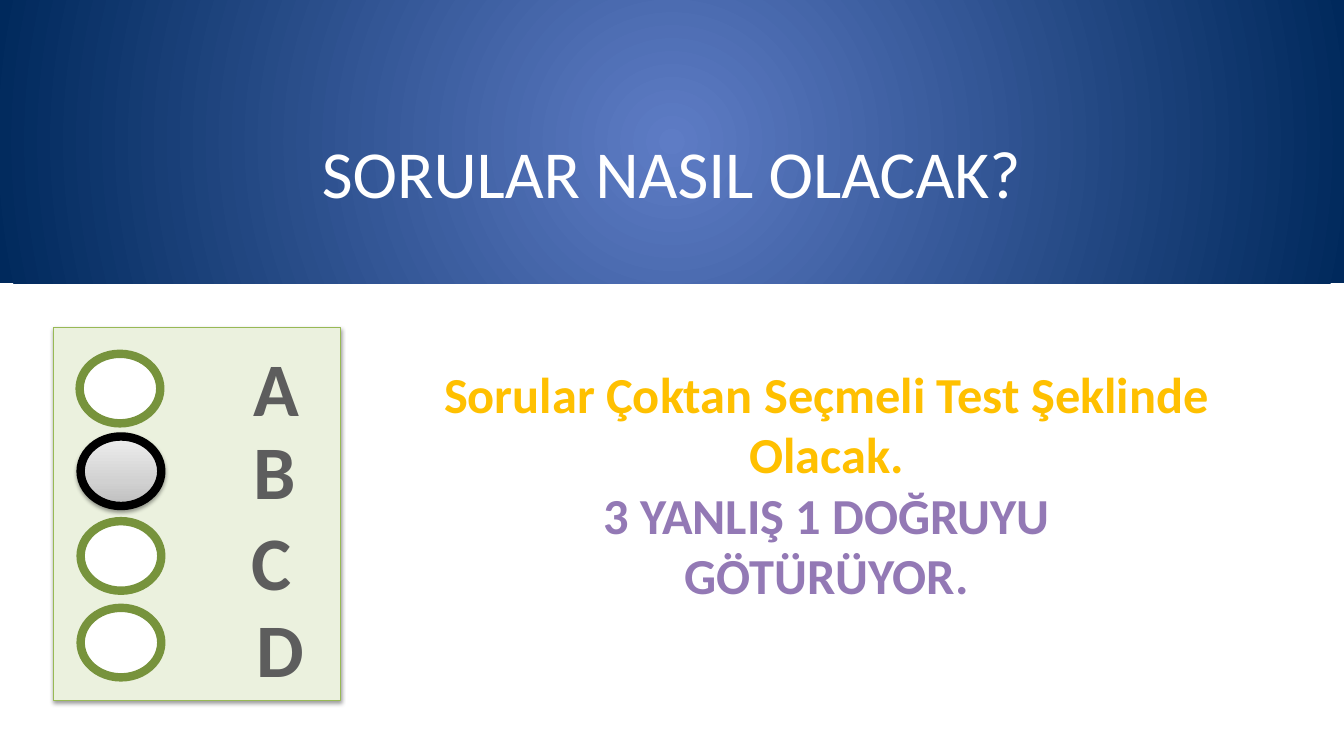
import pptx
import pptx.util
import pptx.oxml
import pptx.oxml.ns
import pptx.dml.color
import pptx.enum.text
import pptx.enum.shapes
from dataclasses import dataclass

Inches, Pt = pptx.util.Inches, pptx.util.Pt
RGB = pptx.dml.color.RGBColor.from_string
KIND = pptx.enum.shapes.MSO_SHAPE
ALIGN = pptx.enum.text.PP_ALIGN
ANCHOR = pptx.enum.text.MSO_ANCHOR


@dataclass(frozen=True)
class Theme:
    font: str = "Calibri"
    white: str = "FFFFFF"
    black: str = "000000"
    panel: str = "EBF1DE"
    edge: str = "98B955"
    ring: str = "77933C"
    letter: str = "5D5D5D"
    gold: str = "FFC000"
    violet: str = "9379B5"
    banner: tuple = ((0, "5E7CC5"), (100, "00295C"))
    marked: tuple = ((0, "BDBDBD"), (35, "D1D1D1"), (100, "EEEEEE"))
    title: int = 48
    choice: int = 54
    body: int = 36


CIRCLE = ('<a:path path="circle"><a:fillToRect l="50000" t="50000" '
          'r="50000" b="50000"/></a:path>')
UPWARD = '<a:lin ang="16200000" scaled="0"/>'


def make(xml):
    """Parse one drawing element, declaring its namespace."""
    head, tail = xml.split(">", 1)
    return pptx.oxml.parse_xml(f'{head} {pptx.oxml.ns.nsdecls("a")}>{tail}')


def apply(item, style):
    for name, value in style.items():
        setattr(item, name, value)


class Board:
    def __init__(self, slide, theme):
        self.slide, self.theme = slide, theme

    def shape(self, kind, box, fill, line=None, width=0, home=None):
        home = home or self.slide.shapes
        item = home.add_shape(kind, *map(Inches, box))
        item.shadow.inherit = False
        item.fill.solid()
        item.fill.fore_color.rgb = RGB(fill)
        if line:
            item.line.color.rgb = RGB(line)
            item.line.width = Pt(width)
        else:
            item.line.fill.background()
        return item

    def blend(self, item, stops, course):
        """Swap the solid fill for a gradient along the given course."""
        marks = "".join(f'<a:gs pos="{pos * 1000}"><a:srgbClr val="{tint}"/></a:gs>'
                        for pos, tint in stops)
        old = item._element.spPr.find(pptx.oxml.ns.qn("a:solidFill"))
        old.getparent().replace(old, make(
            f'<a:gradFill rotWithShape="1"><a:gsLst>{marks}</a:gsLst>{course}</a:gradFill>'))

    def shade(self, item):
        """Cast a soft shadow straight down."""
        blur, drop = Pt(3.1), Pt(1.6)
        item._element.spPr.find(pptx.oxml.ns.qn("a:effectLst")).append(make(
            f'<a:outerShdw blurRad="{blur}" dist="{drop}" dir="5400000" rotWithShape="0">'
            f'<a:srgbClr val="{self.theme.black}"><a:alpha val="38000"/></a:srgbClr>'
            '</a:outerShdw>'))

    def text(self, box, lines, size, bold=True, anchor=ANCHOR.TOP):
        """Write centred lines, each a pair of wording and colour."""
        frame = self.slide.shapes.add_textbox(*map(Inches, box)).text_frame
        apply(frame, {"word_wrap": True, "vertical_anchor": anchor})
        for spot, (words, tint) in enumerate(lines):
            para = frame.add_paragraph() if spot else frame.paragraphs[0]
            para.alignment = ALIGN.CENTER
            run = para.add_run()
            run.text = words
            apply(run.font, {"name": self.theme.font, "size": Pt(size), "bold": bold})
            run.font.color.rgb = RGB(tint)


def main():
    deck = pptx.Presentation()
    apply(deck, {"slide_width": Inches(13.33), "slide_height": Inches(7.5)})
    look = Theme()
    board = Board(deck.slides.add_slide(deck.slide_layouts[6]), look)

    banner = board.shape(KIND.RECTANGLE, (0, 0, 13.33, 2.81), look.white)
    board.blend(banner, look.banner, CIRCLE)
    board.text((1, 0.81, 11.32, 1.79), [("SORULAR NASIL OLACAK?", look.white)],
               look.title, False, ANCHOR.MIDDLE)

    panel = board.shape(KIND.RECTANGLE, (0.53, 3.25, 2.85, 3.7),
                        look.panel, look.edge, 0.75)
    board.shade(panel)

    rings = board.slide.shapes.add_group_shape().shapes
    marked = board.shape(KIND.OVAL, (0.8, 4.33, 0.8, 0.69),
                         look.white, look.black, 6, rings)
    board.blend(marked, look.marked, UPWARD)
    board.shade(marked)
    for left, top in ((0.79, 3.51), (0.8, 5.17), (0.8, 6.03)):
        board.shape(KIND.OVAL, (left, top, 0.8, 0.69),
                    look.white, look.ring, 6, rings)

    places = ((2.42, 3.33), (2.42, 4.16), (2.4, 5.06), (2.45, 5.92))
    for letter, place in zip("ABCD", places):
        board.text((*place, 0.44, 1.01), [(letter, look.letter)], look.choice)

    board.text((4.26, 3.55, 7.88, 2.83), [
        ("Sorular Çoktan Seçmeli Test Şeklinde Olacak.", look.gold),
        ("3 YANLIŞ 1 DOĞRUYU", look.violet),
        ("GÖTÜRÜYOR.", look.violet),
    ], look.body)
    deck.save("out.pptx")


if __name__ == "__main__":
    main()
